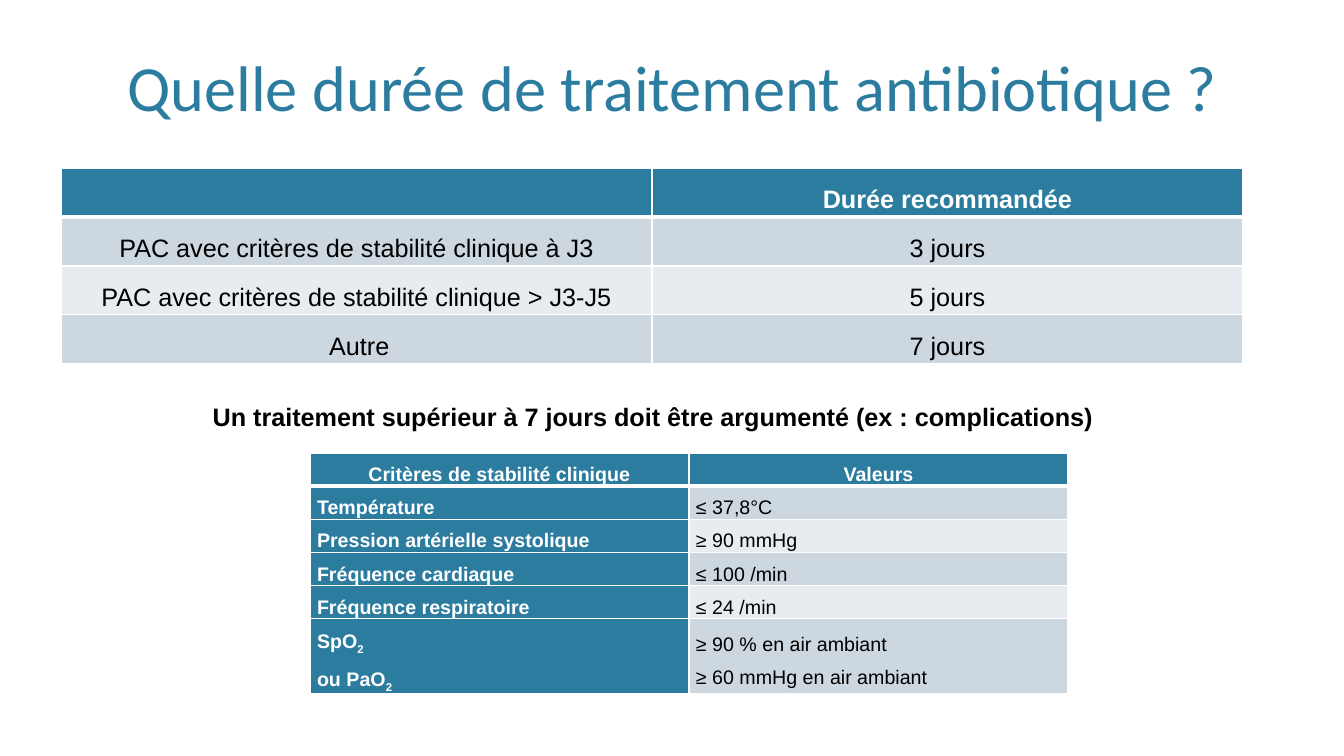
from pptx import Presentation
from pptx.dml.color import RGBColor
from pptx.enum.text import MSO_ANCHOR as Anchor, MSO_AUTO_SIZE as AutoSize, PP_ALIGN as Align
from pptx.oxml import parse_xml
from pptx.oxml.ns import nsdecls
from pptx.util import Pt

PX = 9071.43
COLORS = {"teal": "2C7C9F", "dark_band": "CDD7DF", "light_band": "E8ECF0",
          "white": "FFFFFF", "black": "000000"}


def px(*lengths):
    return [round(length * PX) for length in lengths]


def write(frame, text, size=18, color="black", bold=False, font="Arial",
          align=Align.CENTER, spacing=None):
    for i, line in enumerate(text.split("\n")):
        paragraph = frame.paragraphs[0] if i == 0 else frame.add_paragraph()
        paragraph.alignment = align
        paragraph.line_spacing = spacing
        for j, piece in enumerate(line.split("~")):
            run = paragraph.add_run()
            run.text = piece
            run.font.name = font
            run.font.size = Pt(size)
            run.font.bold = bold
            run.font.color.rgb = RGBColor.from_string(COLORS[color])
            if j % 2:
                run.font._element.set("baseline", "-25000")


deck = Presentation()
deck.slide_width, deck.slide_height = px(1344, 756)
slide = deck.slides.add_slide(deck.slide_layouts[5])

title = slide.shapes.title
title.left, title.top, title.width, title.height = px(81, 12, 1182, 118)
title.text_frame.auto_size = AutoSize.NONE
title.text_frame.vertical_anchor = Anchor.BOTTOM
write(title.text_frame, "Quelle durée de traitement antibiotique ?",
      size=46, color="teal", font="Calibri")

durations = [
    ("", "Durée recommandée"),
    ("PAC avec critères de stabilité clinique à J3", "3 jours"),
    ("PAC avec critères de stabilité clinique > J3-J5", "5 jours"),
    (" Autre", "7 jours"),
]
criteria = [
    ("Critères de stabilité clinique", "Valeurs"),
    ("Température ", "≤ 37,8°C"),
    ("Pression artérielle systolique ", "≥ 90 mmHg"),
    ("Fréquence cardiaque ", "≤ 100 /min"),
    ("Fréquence respiratoire ", "≤ 24 /min"),
    ("SpO~2 \nou PaO~2 ", "≥ 90 % en air ambiant\n≥ 60 mmHg en air ambiant"),
]
tables = [
    (durations, (61, 168, 1182, 196), [49] * 4, 18, (1, 1, 1, 0), Align.CENTER, False),
    (criteria, (310, 453, 758, 224), [31] * 5 + [63], 14, (7, 0, 7, 0), Align.JUSTIFY, True),
]
for content, place, heights, size, margins, body_align, teal_labels in tables:
    table = slide.shapes.add_table(len(content), 2, *px(*place)).table
    table.first_col = teal_labels
    for r, (texts, height) in enumerate(zip(content, heights)):
        table.rows[r].height = px(height)[0]
        for c, text in enumerate(texts):
            cell = table.cell(r, c)
            heading = r == 0 or (teal_labels and c == 0)
            band = "dark_band" if r % 2 else "light_band"
            for side in "LRTB":
                width = 3 if (r == 0 and side == "B") or (r == 1 and side == "T") else 1
                cell._tc.get_or_add_tcPr().append(parse_xml(
                    f'<a:ln{side} {nsdecls("a")} w="{Pt(width)}"><a:solidFill>'
                    f'<a:srgbClr val="{COLORS["white"]}"/></a:solidFill></a:ln{side}>'))
            cell.fill.solid()
            cell.fill.fore_color.rgb = RGBColor.from_string(COLORS["teal" if heading else band])
            cell.vertical_anchor = Anchor.MIDDLE
            cell.margin_left, cell.margin_top, cell.margin_right, cell.margin_bottom = px(*margins)
            if text:
                write(cell.text_frame, text, size=size, bold=heading, spacing=1.5,
                      color="white" if heading else "black",
                      align=Align.CENTER if r == 0 else body_align)

warning = slide.shapes.add_textbox(*px(70, 396, 1173, 40)).text_frame
warning.word_wrap = True
warning.auto_size = AutoSize.SHAPE_TO_FIT_TEXT
write(warning, "Un traitement supérieur à 7 jours doit être argumenté (ex : complications) ", bold=True)

deck.save("out.pptx")
